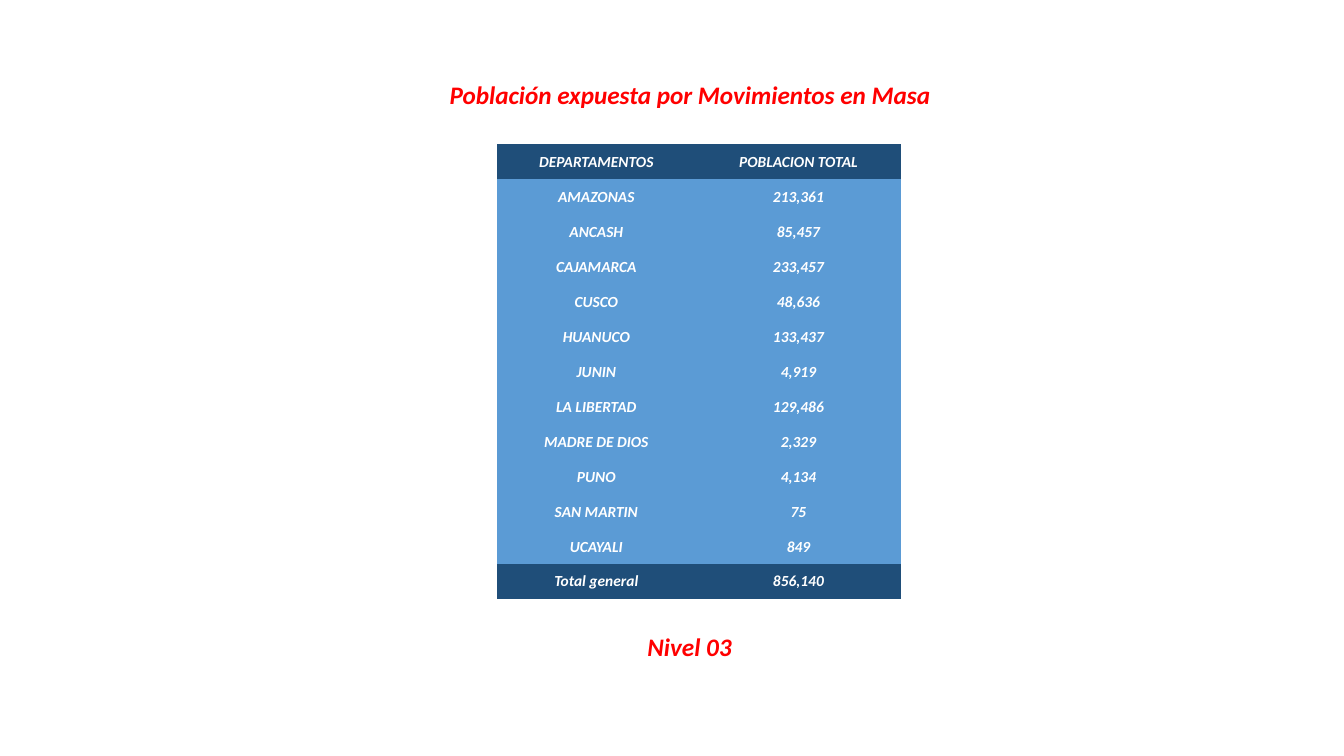
"""Build a slide with the population exposed to mass movements by department."""
from dataclasses import dataclass

from pptx import Presentation
from pptx import util as u
from pptx.dml.color import RGBColor
from pptx.enum import text
from pptx.oxml import ns


@dataclass(frozen=True)
class Theme:
    """Colours, font and type sizes of the slide."""
    font: str = "Calibri"
    heading_size: int = 18
    cell_size: int = 11
    heading: str = "FF0000"
    cell_text: str = "FFFFFF"
    dark_fill: str = "1F4E79"
    body_fill: str = "5B9BD5"
    table_style: str = "{2D5ABB26-0587-4C30-8999-92F81FD0307C}"


HEADER = ("DEPARTAMENTOS", "POBLACION TOTAL")
DEPARTMENTS = [
    ("AMAZONAS", "213,361"),
    ("ANCASH", "85,457"),
    ("CAJAMARCA", "233,457"),
    ("CUSCO", "48,636"),
    ("HUANUCO", "133,437"),
    ("JUNIN", "4,919"),
    ("LA LIBERTAD", "129,486"),
    ("MADRE DE DIOS", "2,329"),
    ("PUNO", "4,134"),
    ("SAN MARTIN", "75"),
    ("UCAYALI", "849"),
]
TOTAL = ("Total general", "856,140")


def write_text(frame, content, *, font, size, color, bold=True, italic=True,
               align=text.PP_ALIGN.CENTER):
    """Write one formatted paragraph into a text frame."""
    paragraph = frame.paragraphs[0]
    paragraph.alignment = align
    run = paragraph.add_run()
    run.text = content
    run.font.name = font
    run.font.size = u.Pt(size)
    run.font.bold = bold
    run.font.italic = italic
    run.font.color.rgb = RGBColor.from_string(color)


class SlideBuilder:
    """Draw styled elements on the current slide."""

    def __init__(self, slide, theme):
        self.slide = slide
        self.theme = theme

    def heading(self, content, left, top, width, height, wrap=True):
        """Add a centred heading."""
        shape = self.slide.shapes.add_textbox(*map(u.Inches, (left, top, width, height)))
        frame = shape.text_frame
        frame.word_wrap = wrap
        frame.auto_size = text.MSO_AUTO_SIZE.SHAPE_TO_FIT_TEXT
        write_text(frame, content, font=self.theme.font,
                   size=self.theme.heading_size, color=self.theme.heading)

    def table(self, rows, left, top, widths, height):
        """Add a table whose first and last rows are dark."""
        frame = self.slide.shapes.add_table(
            len(rows), len(widths),
            *map(u.Inches, (left, top, sum(widths), height)))
        table = frame.table
        table.first_row = table.horz_banding = False
        style = table._tbl.tblPr.find(ns.qn("a:tableStyleId"))
        style.text = self.theme.table_style
        for column, width in zip(table.columns, widths):
            column.width = u.Inches(width)
        for index, values in enumerate(rows):
            table.rows[index].height = u.Inches(height / len(rows))
            is_edge = index in (0, len(rows) - 1)
            fill = self.theme.dark_fill if is_edge else self.theme.body_fill
            for cell, value in zip(table.rows[index].cells, values):
                self.cell(cell, value, fill)

    def cell(self, cell, content, fill):
        """Fill and format one table cell."""
        cell.fill.solid()
        cell.fill.fore_color.rgb = RGBColor.from_string(fill)
        cell.vertical_anchor = text.MSO_ANCHOR.MIDDLE
        cell.margin_left = cell.margin_right = cell.margin_top = u.Inches(0.01)
        cell.margin_bottom = 0
        write_text(cell.text_frame, content, font=self.theme.font,
                   size=self.theme.cell_size, color=self.theme.cell_text)


def main():
    """Create and save the presentation."""
    presentation = Presentation()
    presentation.slide_width = u.Inches(13.33)
    presentation.slide_height = u.Inches(7.5)
    slide = presentation.slides.add_slide(presentation.slide_layouts[6])
    builder = SlideBuilder(slide, Theme())
    builder.heading("Población expuesta por Movimientos en Masa",
                    4.33, 0.74, 5.03, 0.4, wrap=False)
    builder.heading("Nivel 03", 6.29, 6.21, 1.1, 0.4)
    builder.table([HEADER, *DEPARTMENTS, TOTAL], 4.93, 1.43, (1.97, 2.04), 4.51)
    presentation.save("out.pptx")


if __name__ == "__main__":
    main()
